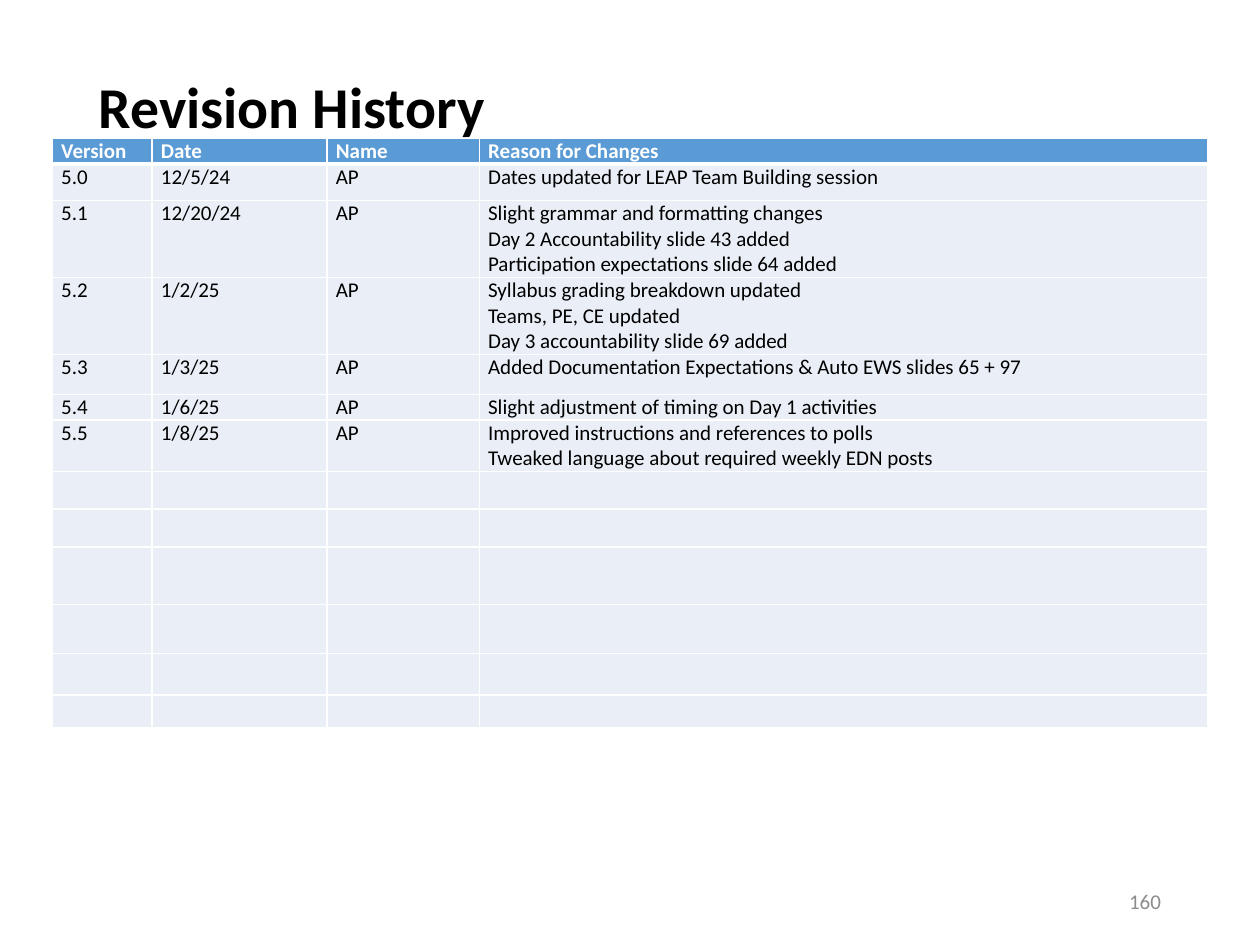
from dataclasses import dataclass

from lxml import etree
from pptx import Presentation
from pptx import util as u
from pptx.dml.color import RGBColor
from pptx.enum import text
from pptx.oxml import ns


@dataclass(frozen=True)
class Theme:
    font: str = "Calibri"
    title_size: float = 33
    body_size: float = 12
    ink: str = "000000"
    white: str = "FFFFFF"
    header: str = "5B9BD5"
    row: str = "EAEFF7"
    muted: str = "8C8C8C"


T = Theme()

COLS = [57, 100, 87, 416.4]
HEADINGS = ("Version", "Date", "Name", "Reason for Changes")

# Row height, version, date, reasons
REVISIONS = [
    (20.9, "5.0", "12/5/24", ["Dates updated for LEAP Team Building session"]),
    (43.9, "5.1", "12/20/24", ["Slight grammar and formatting changes",
                               "Day 2 Accountability slide 43 added",
                               "Participation expectations slide 64 added"]),
    (43.9, "5.2", "1/2/25", ["Syllabus grading breakdown updated",
                             "Teams, PE, CE updated",
                             "Day 3 accountability slide 69 added"]),
    (23, "5.3", "1/3/25",
     ["Added Documentation Expectations & Auto EWS slides 65 + 97"]),
    (14.6, "5.4", "1/6/25", ["Slight adjustment of timing on Day 1 activities"]),
    (29.3, "5.5", "1/8/25", ["Improved instructions and references to polls",
                             "Tweaked language about required weekly EDN posts"]),
]
AUTHOR = "AP"
HEADER_HEIGHT = 14.6
EMPTY_HEIGHTS = [21.6, 21.6, 33, 28, 23.8, 18.7]


def style(p, size, color, bold=False):
    p.font.name = T.font
    p.font.size = u.Pt(size)
    p.font.bold = bold
    p.font.color.rgb = RGBColor.from_string(color)


def add_text(slide, box, words, size, color, bold=False, align=None):
    sp = slide.shapes.add_textbox(*map(u.Pt, box))
    tf = sp.text_frame
    tf.word_wrap = True
    tf.vertical_anchor = text.MSO_ANCHOR.MIDDLE
    p = tf.paragraphs[0]
    p.text = words
    p.alignment = align
    style(p, size, color, bold)
    return sp


def set_borders(cell, widths):
    """Draw white borders; widths are left, right, top, bottom in points."""
    tc_pr = cell._tc.get_or_add_tcPr()
    for i, (side, width) in enumerate(zip("LRTB", widths)):
        ln = etree.Element(ns.qn(f"a:ln{side}"), w=str(u.Pt(width)))
        fill = etree.SubElement(ln, ns.qn("a:solidFill"))
        etree.SubElement(fill, ns.qn("a:srgbClr"), val=T.white)
        tc_pr.insert(i, ln)


def fill_cell(cell, lines, fill, color, bold, borders):
    cell.margin_left = cell.margin_right = u.Pt(5)
    cell.margin_top = cell.margin_bottom = 0
    cell.fill.solid()
    cell.fill.fore_color.rgb = RGBColor.from_string(fill)
    set_borders(cell, borders)
    cell.text_frame.text = "\n".join(lines)
    for p in cell.text_frame.paragraphs:
        style(p, T.body_size, color, bold)
        if not p.runs:  # an empty cell takes its size from the end mark
            end = p._p.get_or_add_endParaRPr()
            end.set("sz", str(int(T.body_size * 100)))


def add_history(slide, left, top):
    heights = [HEADER_HEIGHT, *(rev[0] for rev in REVISIONS), *EMPTY_HEIGHTS]
    rows = [[[h] for h in HEADINGS]]
    rows += [[[version], [date], [AUTHOR], reasons]
             for _, version, date, reasons in REVISIONS]
    rows += [[[]] * len(COLS) for _ in EMPTY_HEIGHTS]

    frame = slide.shapes.add_table(len(rows), len(COLS), u.Pt(left), u.Pt(top),
                                   u.Pt(sum(COLS)), u.Pt(sum(heights)))
    table = frame.table
    table.horz_banding = False
    for col, width in zip(table.columns, COLS):
        col.width = u.Pt(width)
    for r, (row, height) in enumerate(zip(rows, heights)):
        table.rows[r].height = u.Pt(height)
        is_header = r == 0
        fill, color = (T.header, T.white) if is_header else (T.row, T.ink)
        borders = (1, 1, 3 if r == 1 else 1, 3 if is_header else 1)
        for c, lines in enumerate(row):
            fill_cell(table.cell(r, c), lines, fill, color, is_header, borders)


def main():
    prs = Presentation()
    prs.slide_width, prs.slide_height = u.Pt(720), u.Pt(540)
    s = prs.slides.add_slide(prs.slide_layouts[6])

    # Title, lifted above the table by its bottom inset
    title = add_text(s, (49.5, 28.8, 621, 104.4), "Revision History",
                     T.title_size, T.ink, bold=True)
    title.text_frame.margin_bottom = u.Pt(40)
    title.text_frame.paragraphs[0].line_spacing = 0.9

    # Revision table
    add_history(s, 30, 79.2)

    # Slide number
    add_text(s, (508.5, 500.5, 162, 28.75), "160", T.body_size, T.muted,
             align=text.PP_ALIGN.RIGHT)

    prs.save("out.pptx")


if __name__ == "__main__":
    main()
